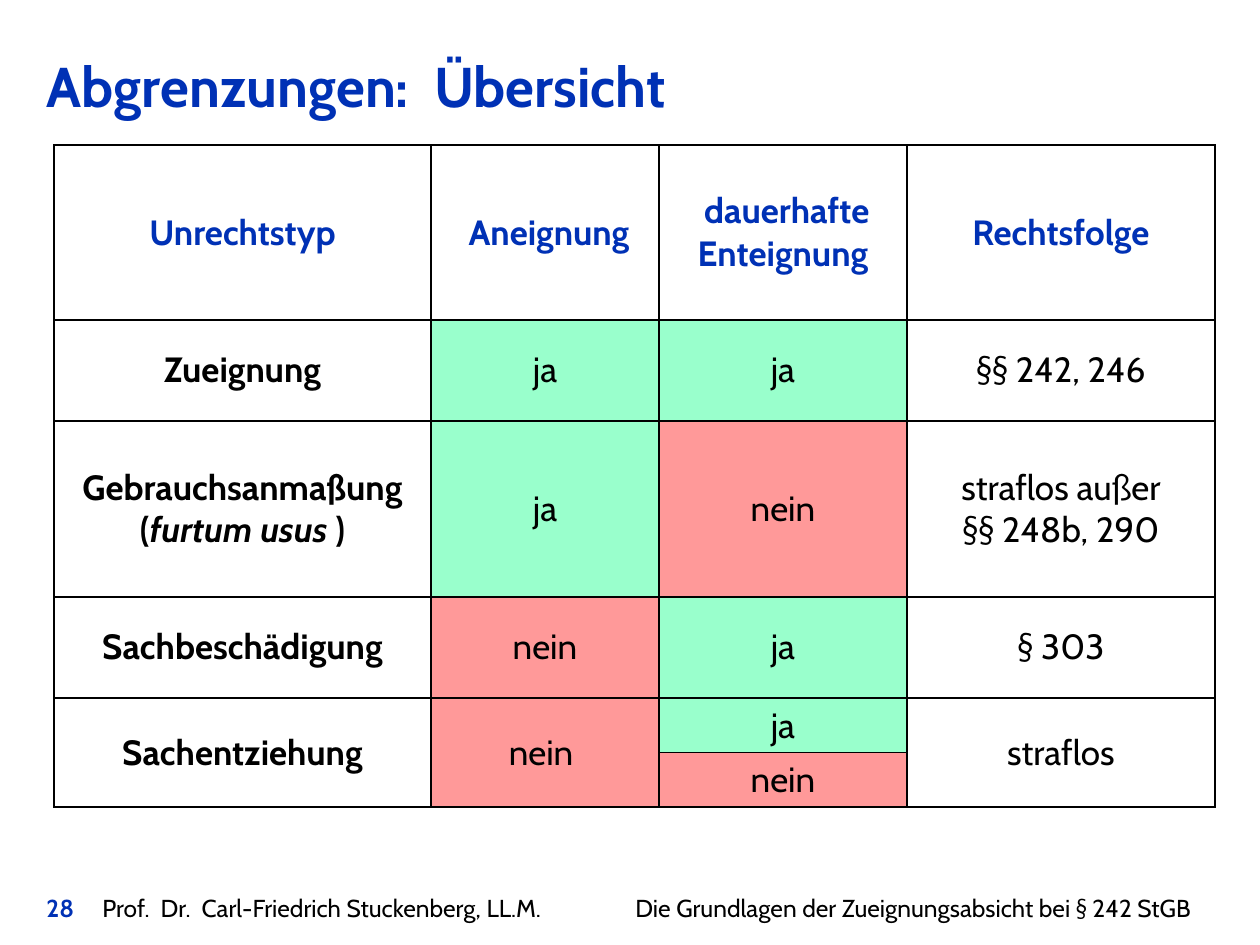
from lxml.etree import SubElement
from pptx import Presentation
from pptx.dml.color import RGBColor
from pptx.enum.text import MSO_ANCHOR, MSO_AUTO_SIZE, PP_ALIGN
from pptx.oxml.ns import qn
from pptx.util import Emu, Pt

SCALE = 914400 / 126
FONT = "Cabin"
COLOURS = {
    "blue": "0031B5",
    "black": "000000",
    "ja": "99FFCC",
    "nein": "FF9999",
}
COLUMN_WIDTHS = [377, 228, 248, 308]
ROW_HEIGHTS = [175, 101, 176, 101, 50, 50]
MERGED_COLUMNS = [0, 1, 3]
ROWS = [
    ["Unrechtstyp", " Aneignung", " dauerhafte Enteignung", "Rechtsfolge"],
    ["Zueignung", "ja", "ja", "§§ 242, 246"],
    [["Gebrauchsanmaßung (", "furtum usus ", ")"], "ja", "nein",
     "straflos außer\n§§ 248b, 290"],
    ["Sachbeschädigung", "nein", "ja", "§ 303"],
    ["Sachentziehung", "nein ", "ja", "straflos"],
    ["", "", "nein", ""],
]


def px(length):
    """Turn a length in px into EMU."""
    return Emu(round(length * SCALE))


def colour(name):
    """Return the named colour."""
    return RGBColor.from_string(COLOURS[name])


def add_span(para, text, size=20, ink="black", bold=False, italic=False):
    """Add formatted text to a paragraph."""
    span = para.add_run()
    span.text = text
    span.font.name = FONT
    span.font.size = Pt(size)
    span.font.bold = bold
    span.font.italic = italic
    span.font.color.rgb = colour(ink)


def place(shape, left, top, width, height):
    """Set the position and size of a shape."""
    shape.left, shape.top = px(left), px(top)
    shape.width, shape.height = px(width), px(height)


def add_title(page, text):
    """Fill and move the title placeholder."""
    title = page.shapes.title
    place(title, 34, 35, 1181, 100)
    frame = title.text_frame
    frame.auto_size = MSO_AUTO_SIZE.NONE
    frame.vertical_anchor = MSO_ANCHOR.MIDDLE
    para = frame.paragraphs[0]
    para.alignment = PP_ALIGN.LEFT
    add_span(para, text, size=32, ink="blue", bold=True)


def add_borders(cell):
    """Draw a thin black line on every side of a cell."""
    properties = cell._tc.get_or_add_tcPr()
    for side in ("a:lnL", "a:lnR", "a:lnT", "a:lnB"):
        line = SubElement(properties, qn(side), w=str(Pt(1)))
        fill = SubElement(line, qn("a:solidFill"))
        SubElement(fill, qn("a:srgbClr"), val=COLOURS["black"])


def fill_cell(cell, content, ink, bold):
    """Write centred text into a cell and colour it by its answer."""
    add_borders(cell)
    cell.vertical_anchor = MSO_ANCHOR.MIDDLE
    spans = [content] if isinstance(content, str) else content
    answer = spans[0].strip()
    if answer in COLOURS:
        cell.fill.solid()
        cell.fill.fore_color.rgb = colour(answer)
    else:
        cell.fill.background()
    frame = cell.text_frame
    para = frame.paragraphs[0]
    para.alignment = PP_ALIGN.CENTER
    for index, text in enumerate(spans):
        for number, line in enumerate(text.split("\n")):
            if number:
                para = frame.add_paragraph()
                para.alignment = PP_ALIGN.CENTER
            if line:
                add_span(para, line, ink=ink, bold=bold, italic=index == 1)


def add_overview(page):
    """Add the table that compares the types of wrong."""
    table = page.shapes.add_table(
        len(ROW_HEIGHTS), len(COLUMN_WIDTHS), px(54), px(145),
        px(sum(COLUMN_WIDTHS)), px(sum(ROW_HEIGHTS))).table
    table.first_row = table.horz_banding = False
    for column, width in zip(table.columns, COLUMN_WIDTHS):
        column.width = px(width)
    for row, height in zip(table.rows, ROW_HEIGHTS):
        row.height = px(height)
    for row_index, row in enumerate(ROWS):
        header = row_index == 0
        for column_index, content in enumerate(row):
            fill_cell(table.cell(row_index, column_index), content,
                      ink="blue" if header else "black",
                      bold=header or column_index == 0)
    for column_index in MERGED_COLUMNS:
        table.cell(4, column_index).merge(table.cell(5, column_index))


def add_footer(page, number, author, topic):
    """Add the footer line, with its parts set on tab stops."""
    box = page.shapes.add_textbox(px(34), px(887), px(1211), px(43))
    box.text_frame.word_wrap = True
    para = box.text_frame.paragraphs[0]
    tabs = SubElement(para._p.get_or_add_pPr(), qn("a:tabLst"))
    for position in (56, 589):
        SubElement(tabs, qn("a:tab"), pos=str(px(position)), algn="l")
    add_span(para, number, size=14, ink="blue", bold=True)
    add_span(para, f"\t{author}\t{topic}", size=14)


def main():
    """Build the slide and save it."""
    deck = Presentation()
    deck.slide_width, deck.slide_height = px(1260), px(945)
    page = deck.slides.add_slide(deck.slide_layouts[5])
    add_footer(page, "28", "Prof.  Dr.  Carl-Friedrich Stuckenberg, LL.M.",
               "Die Grundlagen der Zueignungsabsicht bei § 242 StGB")
    add_overview(page)
    add_title(page, "Abgrenzungen:  Übersicht")
    deck.save("out.pptx")


if __name__ == "__main__":
    main()
